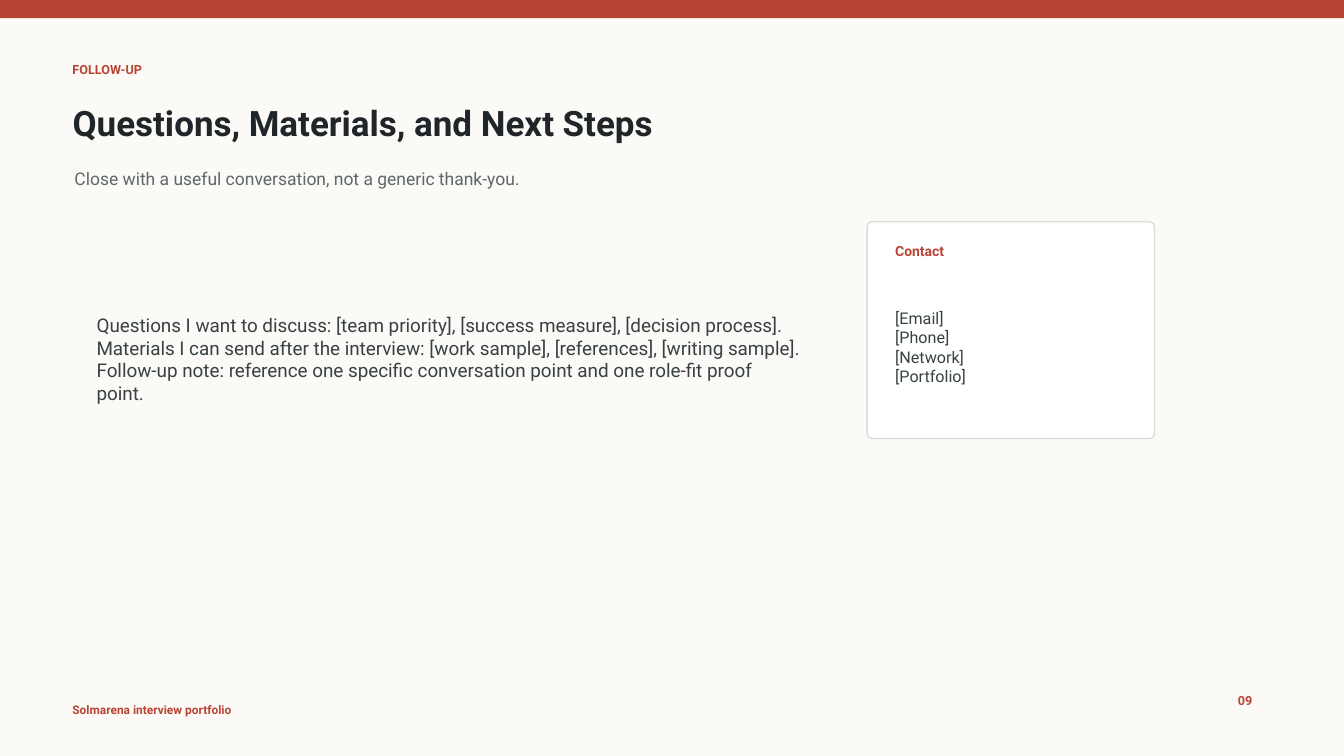
import pptx
import pptx.util
import pptx.dml.color
import pptx.enum.shapes
import pptx.enum.text

Inches = pptx.util.Inches
KIND = pptx.enum.shapes.MSO_SHAPE
HUES = {
    "paper": "FBFAF6",
    "brick": "B74434",
    "ink": "1F2528",
    "slate": "5E686B",
    "body": "384144",
    "card": "FFFFFF",
    "edge": "D8DDD7",
}


def hue(name):
    return pptx.dml.color.RGBColor.from_string(HUES[name])


def write(shape, lines, size, tone, bold=False):
    frame = shape.text_frame
    frame.text = "\n".join(lines)
    frame.word_wrap = True
    frame.auto_size = pptx.enum.text.MSO_AUTO_SIZE.NONE
    frame.vertical_anchor = pptx.enum.text.MSO_ANCHOR.MIDDLE
    for para in frame.paragraphs:
        para.alignment = pptx.enum.text.PP_ALIGN.LEFT
        para.font.name = "Roboto"
        para.font.size = pptx.util.Pt(size)
        para.font.bold = bold
        para.font.color.rgb = hue(tone)


def label(slide, box, lines, size, tone, bold=False):
    shape = slide.shapes.add_textbox(*map(Inches, box))
    write(shape, lines, size, tone, bold)


def title(slide, box, text):
    shape = slide.shapes.title
    shape.left, shape.top, shape.width, shape.height = map(Inches, box)
    write(shape, [text], 25, "ink", True)


def block(slide, kind, box, fill, edge=None):
    shape = slide.shapes.add_shape(kind, *map(Inches, box))
    shape.shadow.inherit = False
    shape.fill.solid()
    shape.fill.fore_color.rgb = hue(fill)
    if edge:
        shape.line.color.rgb = hue(edge)
        shape.line.width = pptx.util.Pt(1)
    else:
        shape.line.fill.background()
    return shape


def card(slide, left, top, head, lines):
    shape = block(slide, KIND.ROUNDED_RECTANGLE, (left, top, 2.85, 2.15), "card", "edge")
    shape.adjustments[0] = 0.023
    inner = left + 0.18
    label(slide, (inner, top + 0.16, 2.49, 0.25), [head], 10, "brick", True)
    label(slide, (inner, top + 0.48, 2.49, 1.53), lines, 11.5, "body")


def main():
    deck = pptx.Presentation()
    deck.slide_width = Inches(13.33)
    deck.slide_height = Inches(7.5)
    slide = deck.slides.add_slide(deck.slide_layouts.get_by_name("Title Only"))
    slide.background.fill.solid()
    slide.background.fill.fore_color.rgb = hue("paper")

    block(slide, KIND.RECTANGLE, (0, 0, 13.33, 0.18), "brick")
    label(slide, (0.62, 6.94, 3, 0.2), ["Solmarena interview portfolio"], 8.5, "brick", True)
    label(slide, (12.18, 6.82, 0.5, 0.25), ["09"], 9, "brick", True)
    label(slide, (0.62, 0.58, 4.8, 0.22), ["FOLLOW-UP"], 9, "brick", True)
    title(slide, (0.62, 0.94, 9.8, 0.55), "Questions, Materials, and Next Steps")
    label(slide, (0.64, 1.56, 10.8, 0.42),
          ["Close with a useful conversation, not a generic thank-you."], 12.5, "slate")
    label(slide, (0.86, 2.16, 7.2, 2.8), [
        "Questions I want to discuss: [team priority], [success measure], [decision process].",
        "Materials I can send after the interview: [work sample], [references], [writing sample].",
        "Follow-up note: reference one specific conversation point and one role-fit proof point.",
    ], 13.5, "body")
    card(slide, 8.6, 2.2, "Contact", ["[Email]", "[Phone]", "[Network]", "[Portfolio]"])
    deck.save("out.pptx")


if __name__ == "__main__":
    main()
